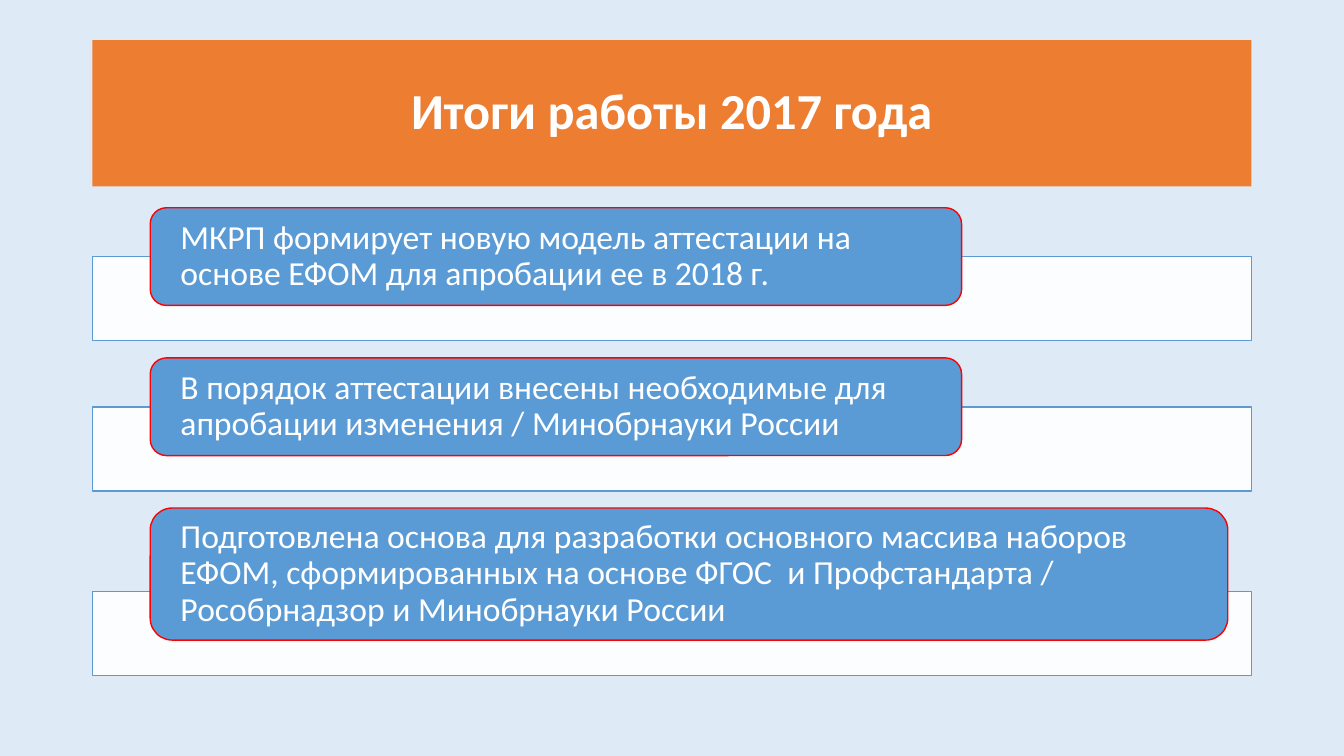
import pptx
import pptx.dml.color
import pptx.enum.shapes
import pptx.enum.text
import pptx.oxml
import pptx.oxml.ns
import pptx.util

Pt = pptx.util.Pt
SHAPES = pptx.enum.shapes.MSO_SHAPE
ALIGN = pptx.enum.text.PP_ALIGN

COLOURS = {
    "background": "DEEBF7",
    "title": "ED7D31",
    "box": "5B9BD5",
    "box line": "FF0000",
    "bar": "FFFFFF",
    "bar line": "5B9BD5",
    "text": "FFFFFF",
}

# Common left edge and width of the title and the bars
LEFT, WIDTH = 66, 828
BAR_HEIGHT = 60
BOX_LEFT, FIRST_TOP, PITCH = 107.3, 148.4, 107.25
OVERLAP = 34.8
TEXT_INDENT = 21.6
# Share of the height by which rounded corners already inset the text
CORNER_INSET = 0.1667 * 0.2929

# Wording, box width, box height
RESULTS = [
    ("МКРП формирует новую модель аттестации на основе ЕФОМ "
     "для апробации ее в 2018 г.", 579.6, 69.8),
    ("В порядок аттестации внесены необходимые для апробации "
     "изменения / Минобрнауки России", 579.6, 69.8),
    ("Подготовлена основа для разработки основного массива наборов ЕФОМ, "
     "сформированных на основе ФГОС  и Профстандарта / "
     "Рособрнадзор и Минобрнауки России", 769.7, 94.3),
]


def colour(name):
    return pptx.dml.color.RGBColor.from_string(COLOURS[name])


def add_panel(page, kind, left, top, width, height, fill, line=None):
    panel = page.shapes.add_shape(kind, Pt(left), Pt(top), Pt(width), Pt(height))
    panel.shadow.inherit = False
    panel.fill.solid()
    panel.fill.fore_color.rgb = colour(fill)
    if line:
        panel.line.color.rgb = colour(line)
        panel.line.width = Pt(1)
    else:
        panel.line.fill.background()
    return panel


def write(panel, words, size, align, indent, bold=False):
    frame = panel.text_frame
    frame.word_wrap = True
    frame.vertical_anchor = pptx.enum.text.MSO_ANCHOR.MIDDLE
    frame.margin_left = frame.margin_right = Pt(indent)
    frame.margin_top = frame.margin_bottom = 0
    para = frame.paragraphs[0]
    para.alignment = align
    para.line_spacing = 0.9
    span = para.add_run()
    span.text = words
    span.font.name = "Calibri"
    span.font.size = Pt(size)
    span.font.bold = bold
    span.font.color.rgb = colour("text")


def set_opacity(panel, percent):
    fill = panel.fill._xPr.find(pptx.oxml.ns.qn("a:solidFill"))
    alpha = pptx.oxml.parse_xml(
        f'<a:alpha {pptx.oxml.ns.nsdecls("a")} val="{percent * 1000}"/>')
    fill[0].append(alpha)


def add_result(page, top, words, width, height):
    # Pale bar behind, rounded box over its upper part
    bar = add_panel(page, SHAPES.RECTANGLE, LEFT, top + height - OVERLAP,
                    WIDTH, BAR_HEIGHT, "bar", "bar line")
    set_opacity(bar, 90)
    box = add_panel(page, SHAPES.ROUNDED_RECTANGLE, BOX_LEFT, top,
                    width, height, "box", "box line")
    write(box, words, 24, ALIGN.LEFT, TEXT_INDENT - height * CORNER_INSET)


def main():
    deck = pptx.Presentation()
    deck.slide_width, deck.slide_height = Pt(960), Pt(540)
    page = deck.slides.add_slide(deck.slide_layouts[6])
    page.background.fill.solid()
    page.background.fill.fore_color.rgb = colour("background")

    # Title band
    title = add_panel(page, SHAPES.RECTANGLE, LEFT, 28.75, WIDTH, 104.4, "title")
    write(title, "Итоги работы 2017 года", 36, ALIGN.CENTER, 7.2, bold=True)

    # Results
    for index, (words, width, height) in enumerate(RESULTS):
        add_result(page, FIRST_TOP + index * PITCH, words, width, height)

    deck.save("out.pptx")


if __name__ == "__main__":
    main()
